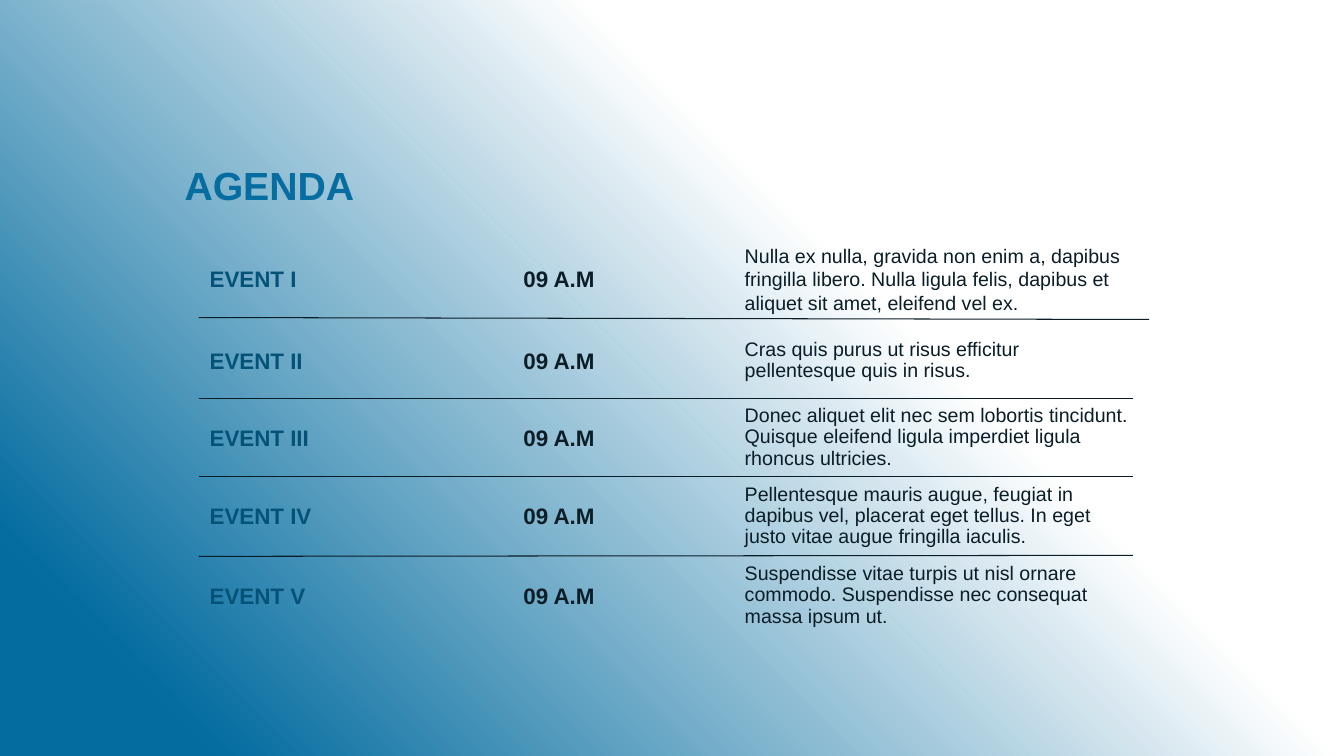
from pptx import Presentation
from pptx.dml.color import RGBColor
from pptx.enum.shapes import MSO_CONNECTOR, MSO_SHAPE
from pptx.enum.text import MSO_ANCHOR, MSO_AUTO_SIZE, PP_ALIGN
from pptx.oxml.ns import qn
from pptx.util import Pt
from lxml import etree

LEFT, CENTER = PP_ALIGN.LEFT, PP_ALIGN.CENTER
MIDDLE, BOTTOM = MSO_ANCHOR.MIDDLE, MSO_ANCHOR.BOTTOM
BLUE, DEEP, INK, WHITE = "056DA0", "045278", "0B1D26", "FFFFFF"
WIDTH, HEIGHT = 960, 540

# Content: event, time, note, row top, note line spacing
ROWS = [
    ("EVENT I", "09 A.M", "Nulla ex nulla, gravida non enim a, dapibus fringilla libero. "
     "Nulla ligula felis, dapibus et aliquet sit amet, eleifend vel ex.", 171.3, 1),
    ("EVENT II", "09 A.M", "Cras quis purus ut risus efficitur pellentesque quis in risus.",
     229.4, 0.9),
    ("EVENT III", "09 A.M", "Donec aliquet elit nec sem lobortis tincidunt. "
     "Quisque eleifend ligula imperdiet ligula rhoncus ultricies.", 284.6, 0.9),
    ("EVENT IV", "09 A.M", "Pellentesque mauris augue, feugiat in dapibus vel, "
     "placerat eget tellus. In eget justo vitae augue fringilla iaculis.", 340.7, 0.9),
    ("EVENT V", "09 A.M", "Suspendisse vitae turpis ut nisl ornare commodo. "
     "Suspendisse nec consequat massa ipsum ut.", 397.5, 0.9),
]
# Rules: start height, end x, end height
RULES = [(226.8, 820.8, 228.2), (284.8, 809.3, 284.8),
         (340.6, 809.3, 340.6), (397.4, 809.3, 396.7)]
RULE_X, ROW_H = 141.8, 55.8


def color(code):
    return RGBColor.from_string(code)


def fade(fill, start, end):
    fill.gradient()
    fill.gradient_angle = 45
    for stop, spot, code in zip(fill.gradient_stops, (start, end), (BLUE, WHITE)):
        stop.position = spot
        stop.color.rgb = color(code)


def put(text, box, shape=None, size=16, ink=INK, bold=False, align=LEFT,
        anchor=MIDDLE, space=1, pad=(7.2, 3.6)):
    shape = shape or slide.shapes.add_textbox(0, 0, 0, 0)
    shape.left, shape.top, shape.width, shape.height = map(Pt, box)
    frame = shape.text_frame
    frame.word_wrap = True
    frame.auto_size = MSO_AUTO_SIZE.NONE
    frame.vertical_anchor = anchor
    frame.margin_left = frame.margin_right = Pt(pad[0])
    frame.margin_top = frame.margin_bottom = Pt(pad[1])
    para = frame.paragraphs[0]
    para.alignment, para.line_spacing = align, space
    run = para.add_run()
    run.text = text
    font = run.font
    font.name, font.size, font.bold = "Arial", Pt(size), bold
    font.color.rgb = color(ink)


deck = Presentation()
deck.slide_width, deck.slide_height = Pt(WIDTH), Pt(HEIGHT)
slide = deck.slides.add_slide(deck.slide_layouts[5])
title = slide.shapes.title

# Background and sheer veil behind the title
fade(slide.background.fill, 0.11, 0.64)
veil = slide.shapes.add_shape(MSO_SHAPE.RECTANGLE, 0, 0, Pt(WIDTH), Pt(HEIGHT))
veil.shadow.inherit = False
veil.line.fill.background()
fade(veil.fill, 0.1, 0.63)
for tint, alpha in zip(veil.element.iter(qn("a:srgbClr")), ("20000", "0")):
    etree.SubElement(tint, qn("a:alpha")).set("val", alpha)
title.element.addprevious(veil.element)

# Title
put("AGENDA", (131.8, 115.9, 158.4, 33.1), shape=title, size=28, ink=BLUE,
    bold=True, anchor=BOTTOM, space=0.9, pad=(0, 0))

# Agenda rows
for event, time, note, top, space in ROWS:
    put(event, (149.8, top, 172.8, ROW_H), ink=DEEP, bold=True, pad=(0, 3.6))
    put(time, (344.9, top, 108.7, ROW_H), bold=True, align=CENTER)
    put(note, (524.9, top, 293, ROW_H), size=14, space=space)

# Rules between rows
for start, right, end in RULES:
    rule = slide.shapes.add_connector(MSO_CONNECTOR.STRAIGHT, Pt(RULE_X), Pt(start),
                                      Pt(right), Pt(end))
    rule.line.color.rgb = color(INK)
    rule.line.width = Pt(0.75)
    etree.SubElement(rule.element.spPr, qn("a:effectLst"))

deck.save("out.pptx")
